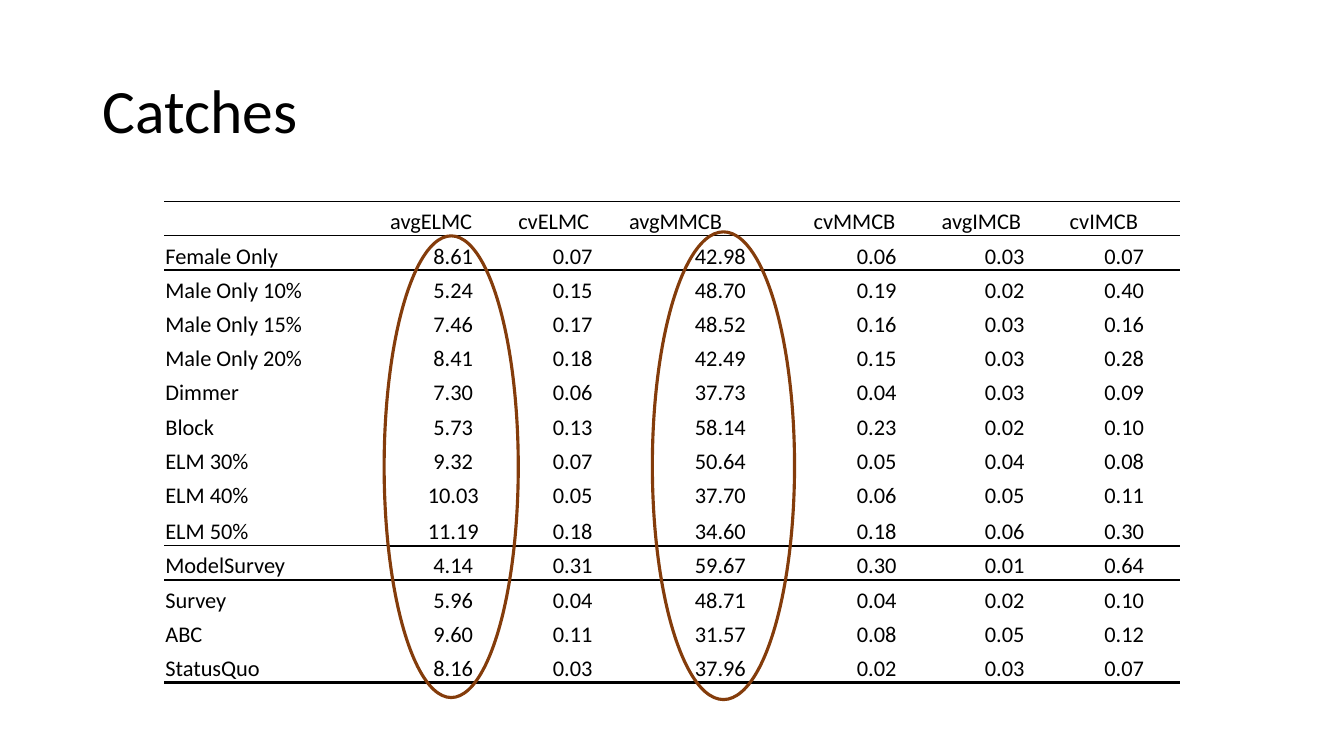
from lxml import etree
from pptx import Presentation
from pptx.dml.color import RGBColor
from pptx.enum.shapes import MSO_SHAPE
from pptx.enum.text import MSO_ANCHOR, PP_ALIGN
from pptx.oxml.ns import qn
from pptx.util import Inches, Pt

OVAL = MSO_SHAPE.OVAL
MIDDLE, BOTTOM = MSO_ANCHOR.MIDDLE, MSO_ANCHOR.BOTTOM
LEFT, CENTER = PP_ALIGN.LEFT, PP_ALIGN.CENTER

COLORS = {"ink": "000000", "highlight": "843C0B"}
FONT = "Calibri"
NO_GRID_STYLE = "{2D5ABB26-0587-4C30-8999-92F81FD0307C}"

HEADINGS = ["", "avgELMC", "cvELMC", "avgMMCB", "cvMMCB", "avgIMCB", "cvIMCB"]
CATCHES = {
    "Female Only": "8.61 0.07 42.98 0.06 0.03 0.07",
    "Male Only 10%": "5.24 0.15 48.70 0.19 0.02 0.40",
    "Male Only 15%": "7.46 0.17 48.52 0.16 0.03 0.16",
    "Male Only 20%": "8.41 0.18 42.49 0.15 0.03 0.28",
    "Dimmer": "7.30 0.06 37.73 0.04 0.03 0.09",
    "Block": "5.73 0.13 58.14 0.23 0.02 0.10",
    "ELM 30%": "9.32 0.07 50.64 0.05 0.04 0.08",
    "ELM 40%": "10.03 0.05 37.70 0.06 0.05 0.11",
    "ELM 50%": "11.19 0.18 34.60 0.18 0.06 0.30",
    "ModelSurvey": "4.14 0.31 59.67 0.30 0.01 0.64",
    "Survey": "5.96 0.04 48.71 0.04 0.02 0.10",
    "ABC": "9.60 0.11 31.57 0.08 0.05 0.12",
    "StatusQuo": "8.16 0.03 37.96 0.02 0.03 0.07",
}
COLUMN_WIDTHS = [16.73, 9.53, 8.25, 13.73, 9.53, 9.53, 8.25]
ROW_HEIGHT, DIVIDER_HEIGHT = 4.53, 4.8
DIVIDER_ROW = list(CATCHES).index("ELM 50%") + 1
LAST_ROW = len(CATCHES)


def write(frame, text, size, align=LEFT, spacing=None):
    paragraph = frame.paragraphs[0]
    paragraph.alignment = align
    paragraph.line_spacing = spacing
    run = paragraph.add_run()
    run.text = text
    run.font.name = FONT
    run.font.size = Pt(size)
    run.font.color.rgb = RGBColor.from_string(COLORS["ink"])


def add_rule(cell, side, weight):
    rule = etree.SubElement(cell._tc.get_or_add_tcPr(), qn(f"a:ln{side}"), w=str(Pt(weight)))
    fill = etree.SubElement(rule, qn("a:solidFill"))
    etree.SubElement(fill, qn("a:srgbClr"), val=COLORS["ink"])


def rules_for(row, column):
    divider = 1 if column == 0 else 2
    return {
        0: {"T": 0.5, "B": 1},
        1: {"T": 1},
        DIVIDER_ROW: {"B": divider},
        DIVIDER_ROW + 1: {"T": divider},
        LAST_ROW: {"B": 2},
    }.get(row, {})


class CatchSlide:
    def __init__(self, deck):
        self.column = deck.slide_width / 100
        self.row = deck.slide_height / 100
        self.slide = deck.slides.add_slide(deck.slide_layouts[5])

    def box(self, left, top, width, height):
        return (round(left * self.column), round(top * self.row),
                round(width * self.column), round(height * self.row))

    def title(self, text, *area):
        heading = self.slide.shapes.title
        heading.left, heading.top, heading.width, heading.height = self.box(*area)
        heading.text_frame.vertical_anchor = MIDDLE
        write(heading.text_frame, text, 44, spacing=0.9)

    def table(self, records, left, top):
        heights = [DIVIDER_HEIGHT if row == DIVIDER_ROW else ROW_HEIGHT
                   for row in range(len(records))]
        area = self.box(left, top, sum(COLUMN_WIDTHS), sum(heights))
        catches = self.slide.shapes.add_table(len(records), len(COLUMN_WIDTHS), *area).table
        catches.first_row = catches.horz_banding = False
        catches._tbl.tblPr.find(qn("a:tableStyleId")).text = NO_GRID_STYLE
        for column, width in zip(catches.columns, COLUMN_WIDTHS):
            column.width = round(width * self.column)
        for row, height in zip(catches.rows, heights):
            row.height = round(height * self.row)
        for row, record in enumerate(records):
            for column, text in enumerate(record):
                self.cell(catches.cell(row, column), text, row, column)

    def cell(self, cell, text, row, column):
        cell.margin_left = cell.margin_right = cell.margin_top = Inches(0.01)
        cell.margin_bottom = 0
        cell.vertical_anchor = BOTTOM
        if text:
            write(cell.text_frame, text, 16, CENTER if row and column else LEFT)
        for side, weight in rules_for(row, column).items():
            add_rule(cell, side, weight)
        cell.fill.background()

    def highlight(self, *area):
        ring = self.slide.shapes.add_shape(OVAL, *self.box(*area))
        ring.shadow.inherit = False
        ring.fill.background()
        ring.line.color.rgb = RGBColor.from_string(COLORS["highlight"])
        ring.line.width = Pt(2.25)


def main():
    deck = Presentation()
    deck.slide_width, deck.slide_height = Inches(13.33), Inches(7.5)
    page = CatchSlide(deck)
    page.title("Catches", 6.9, 5.33, 86.27, 19.33)
    records = [HEADINGS] + [[name, *values.split()] for name, values in CATCHES.items()]
    page.table(records, 12.23, 26.67)
    page.highlight(48.54, 30.67, 10.58, 61.87)
    page.highlight(28.58, 31.2, 9.98, 61.07)
    deck.save("out.pptx")


if __name__ == "__main__":
    main()
